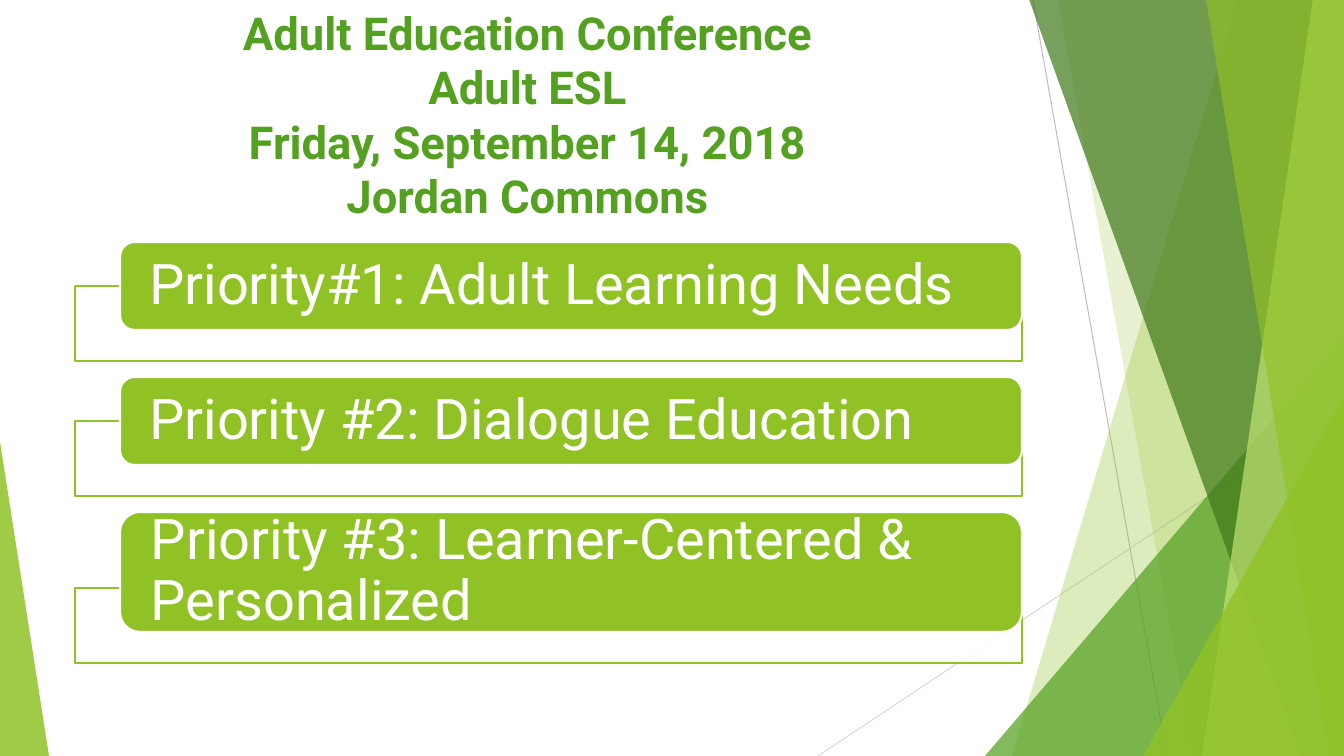
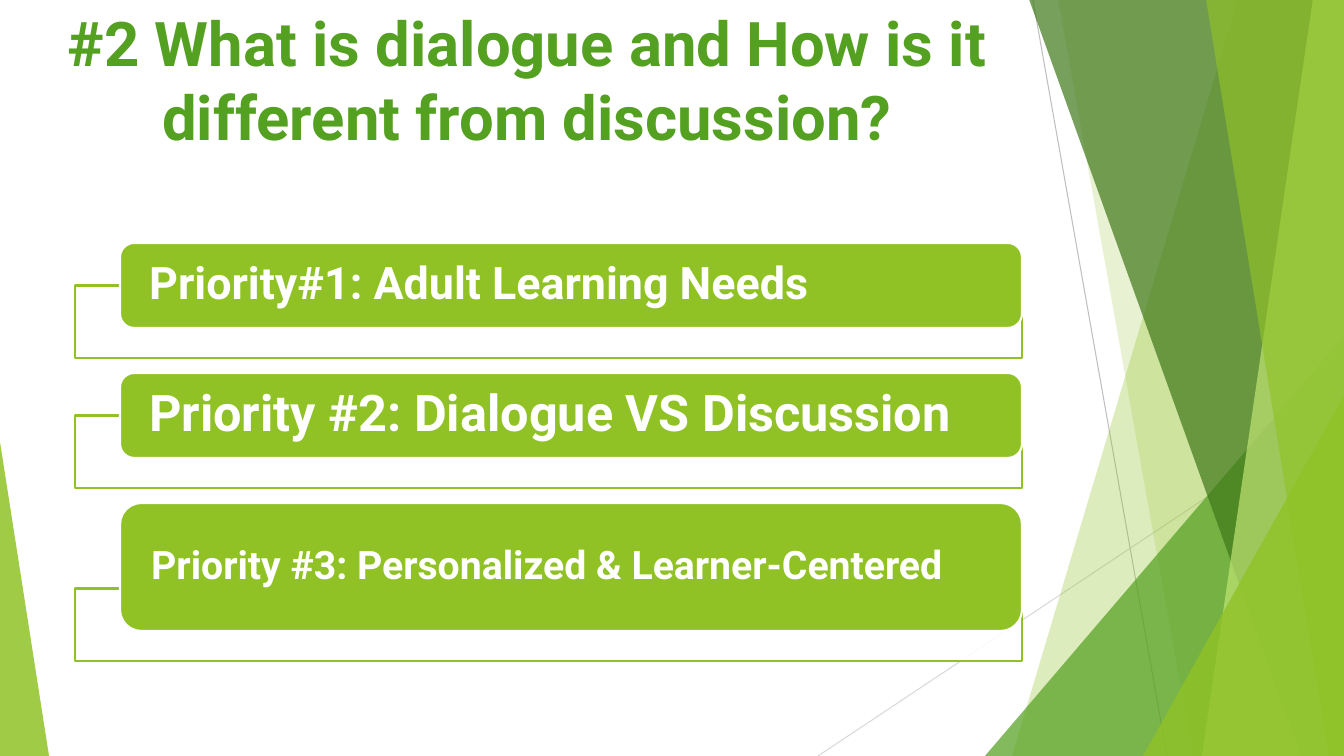
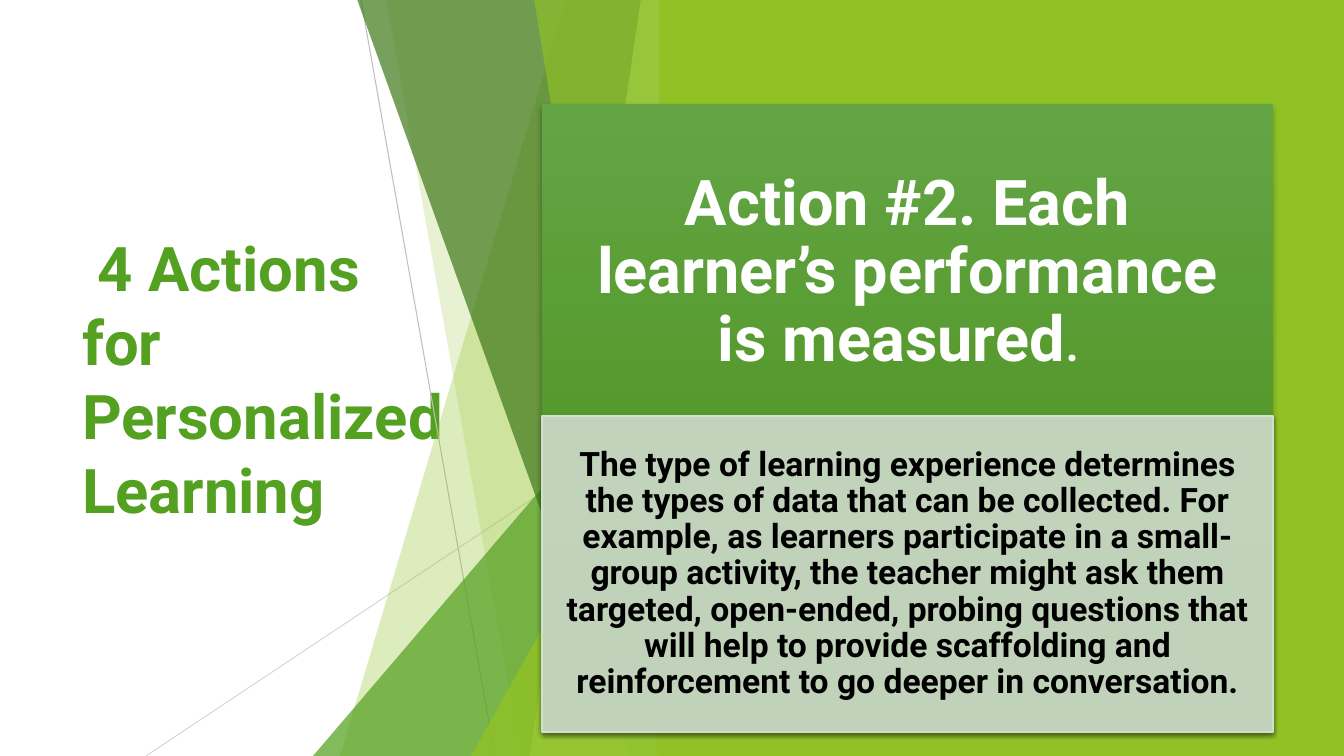
"""Build three slides on adult ESL priorities over a shared green facet design."""
from lxml.etree import SubElement
from pptx import Presentation
from pptx.dml.color import RGBColor
from pptx.enum.shapes import MSO_CONNECTOR as LINK, MSO_SHAPE as SHAPE
from pptx.enum.text import MSO_ANCHOR as ANCHOR, MSO_AUTO_SIZE as FIT, PP_ALIGN as ALIGN
from pptx.oxml.ns import qn
from pptx.util import Pt

WIDTH, HEIGHT = 1344, 756
PX = 12192000 / WIDTH
FONT = "Roboto"
COLORS = {
    "lime": "90C226", "green": "54A021", "forest": "3F7819", "pale": "C0E474",
    "white": "FFFFFF", "black": "000000", "gray": "BFBFBF", "silver": "D9D9D9",
    "grad_top": "63A545", "grad_bottom": "4D921E", "sage": "D1DFCD",
}

RAYS = [((1033, 0), (1167, HEIGHT), "gray"), ((WIDTH, 406), (818, HEIGHT), "silver")]
FACETS = [
    ("band", 1238, 1012, "lime", 30),
    ("band", 1058, 1193, "lime", 20),
    ("peak", 985, 336, "green", 72),
    ("band", 1029, 1301, "forest", 70),
    ("band", 1313, 1202, "pale", 70),
    ("band", 1206, 1329, "lime", 65),
    ("peak", 1143, 396, "lime", 80),
]

PRIORITY_SLIDES = [
    {
        "title": "Adult Education Conference\nAdult ESL\nFriday, September 14, 2018\nJordan Commons",
        "title_size": 32.4, "top": 242, "tab": 88, "bold": False,
        "priorities": [
            ("Priority#1: Adult Learning Needs", 40, 88),
            ("Priority #2: Dialogue Education", 40, 88),
            ("Priority #3: Learner-Centered & Personalized", 40, 120),
        ],
    },
    {
        "title": "#2 What is dialogue and How is it different from discussion?",
        "title_size": 44, "top": 243, "tab": 85, "bold": True,
        "priorities": [
            ("Priority#1: Adult Learning Needs", 32, 85),
            ("Priority #2: Dialogue VS Discussion", 36, 85),
            ("Priority #3: Personalized & Learner-Centered", 28, 128),
        ],
    },
]
ACTION_TITLE = " 4 Actions for Personalized Learning"
ACTION = ("Action #2. Each learner’s performance is measured", ". ")
ACTION_DETAIL = (
    "The type of learning experience determines the types of data that can be collected. "
    "For example, as learners participate in a small-group activity, the teacher might ask "
    "them targeted, open-ended, probing questions that will help to provide scaffolding and "
    "reinforcement to go deeper in conversation."
)


def px(length):
    return round(length * PX)


def rgb(name):
    return RGBColor.from_string(COLORS[name])


def paint(shape, fill, alpha=100, line=None, width=1.5):
    shape.shadow.inherit = False
    shape.fill.solid()
    shape.fill.fore_color.rgb = rgb(fill)
    if alpha < 100:
        color = shape.element.spPr.find(qn("a:solidFill"))[0]
        SubElement(color, qn("a:alpha"), val=str(alpha * 1000))
    if line:
        shape.line.color.rgb = rgb(line)
        shape.line.width = Pt(width)
    else:
        shape.line.fill.background()
    return shape


def add_block(slide, kind, left, top, width, height):
    return slide.shapes.add_shape(kind, px(left), px(top), px(width), px(height))


def cast_shadow(shape, blur, distance):
    effects = shape.element.spPr.find(qn("a:effectLst"))
    shadow = SubElement(effects, qn("a:outerShdw"), blurRad=str(Pt(blur)),
                        dist=str(Pt(distance)), dir="5400000", rotWithShape="0")
    color = SubElement(shadow, qn("a:srgbClr"), val=COLORS["black"])
    SubElement(color, qn("a:alpha"), val="35000")


def style(frame, size, color, bold, align, spacing=None):
    for paragraph in frame.paragraphs:
        paragraph.alignment = align
        paragraph.line_spacing = spacing
        for run in paragraph.runs:
            run.font.name = FONT
            run.font.size = Pt(size)
            run.font.bold = bold
            run.font.color.rgb = rgb(color)


def write(shape, text, size, color, bold, align, margins):
    frame = shape.text_frame
    frame.word_wrap = True
    frame.vertical_anchor = ANCHOR.MIDDLE
    (frame.margin_left, frame.margin_top,
     frame.margin_right, frame.margin_bottom) = map(px, margins)
    frame.text = text
    style(frame, size, color, bold, align, 0.9)


def add_peak(slide, left, top, width, tip, color, alpha):
    peak = add_block(slide, SHAPE.ISOSCELES_TRIANGLE, left, top, width, HEIGHT - top)
    peak.adjustments[0] = tip
    paint(peak, color, alpha)


def add_facets(slide, edge=WIDTH):
    shift = edge - WIDTH
    for (x1, y1), (x2, y2), color in RAYS:
        ray = slide.shapes.add_connector(
            LINK.STRAIGHT, px(x1 + shift), px(y1), px(x2 + shift), px(y2))
        ray.line.color.rgb = rgb(color)
        ray.line.width = Pt(0.75)
        SubElement(ray.element.spPr, qn("a:effectLst"))
    for kind, first, second, color, alpha in FACETS:
        if kind == "peak":
            add_peak(slide, first + shift, second, WIDTH - first, 1, color, alpha)
        else:
            outline = slide.shapes.build_freeform(first + shift, -1, scale=PX)
            outline.add_line_segments([(edge, -1), (edge, HEIGHT), (second + shift, HEIGHT)])
            paint(outline.convert_to_shape(), color, alpha)


def add_slide(deck, title, size, box, anchor, align):
    slide = deck.slides.add_slide(deck.slide_layouts[5])
    heading = slide.shapes.title
    heading.left, heading.top, heading.width, heading.height = map(px, box)
    frame = heading.text_frame
    frame.text = title
    frame.auto_size = FIT.NONE
    frame.vertical_anchor = anchor
    style(frame, size, "green", True, align)
    return slide


def add_priority_slide(deck, content):
    slide = add_slide(deck, content["title"], content["title_size"], (0, 0, 1055, 223),
                      ANCHOR.TOP, ALIGN.CENTER)
    add_facets(slide)
    add_peak(slide, 0, 442, 49, 0, "lime", 85)
    top, tab = content["top"], content["tab"]
    for text, size, height in content["priorities"]:
        bottom = top + height
        frame = add_block(slide, SHAPE.RECTANGLE, 75, bottom - tab / 2, 947, tab * 0.85)
        paint(frame, "white", 90, "lime")
        label = add_block(slide, SHAPE.ROUNDED_RECTANGLE, 120, top, 902, height)
        paint(label, "lime", line="white")
        write(label, text, size, "white", content["bold"], ALIGN.LEFT, (25, 0, 25, 0))
        top = bottom + round(tab * 0.53)


def add_action_slide(deck):
    slide = add_slide(deck, ACTION_TITLE, 44, (72, 152, 391, 452), ANCHOR.MIDDLE, ALIGN.LEFT)
    add_facets(slide, WIDTH // 2)
    paint(add_block(slide, SHAPE.RECTANGLE, 659, 0, WIDTH - 659, HEIGHT), "lime")

    action = paint(add_block(slide, SHAPE.RECTANGLE, 542, 104, 731, 626), "green")
    action.fill.gradient()
    action.fill.gradient_angle = 270
    stops = zip(action.fill.gradient_stops, (0, 0.78), ("grad_top", "grad_bottom"))
    for stop, position, color in stops:
        stop.position = position
        stop.color.rgb = rgb(color)
    cast_shadow(action, 4, 3)
    statement, period = ACTION
    write(action, statement, 45, "white", True, ALIGN.CENTER, (35, 35, 35, 322))
    ending = action.text_frame.paragraphs[0].add_run()
    ending.text = period
    style(action.text_frame, 45, "white", True, ALIGN.CENTER, 0.9)
    ending.font.bold = False

    detail = add_block(slide, SHAPE.RECTANGLE, 542, 416, 731, 316)
    paint(detail, "sage", 90, "sage", 1)
    cast_shadow(detail, 3, 2)
    write(detail, ACTION_DETAIL, 24, "black", True, ALIGN.CENTER, (19, 3, 19, 3))


def main():
    deck = Presentation()
    deck.slide_width, deck.slide_height = px(WIDTH), px(HEIGHT)
    for content in PRIORITY_SLIDES:
        add_priority_slide(deck, content)
    add_action_slide(deck)
    deck.save("out.pptx")


if __name__ == "__main__":
    main()
